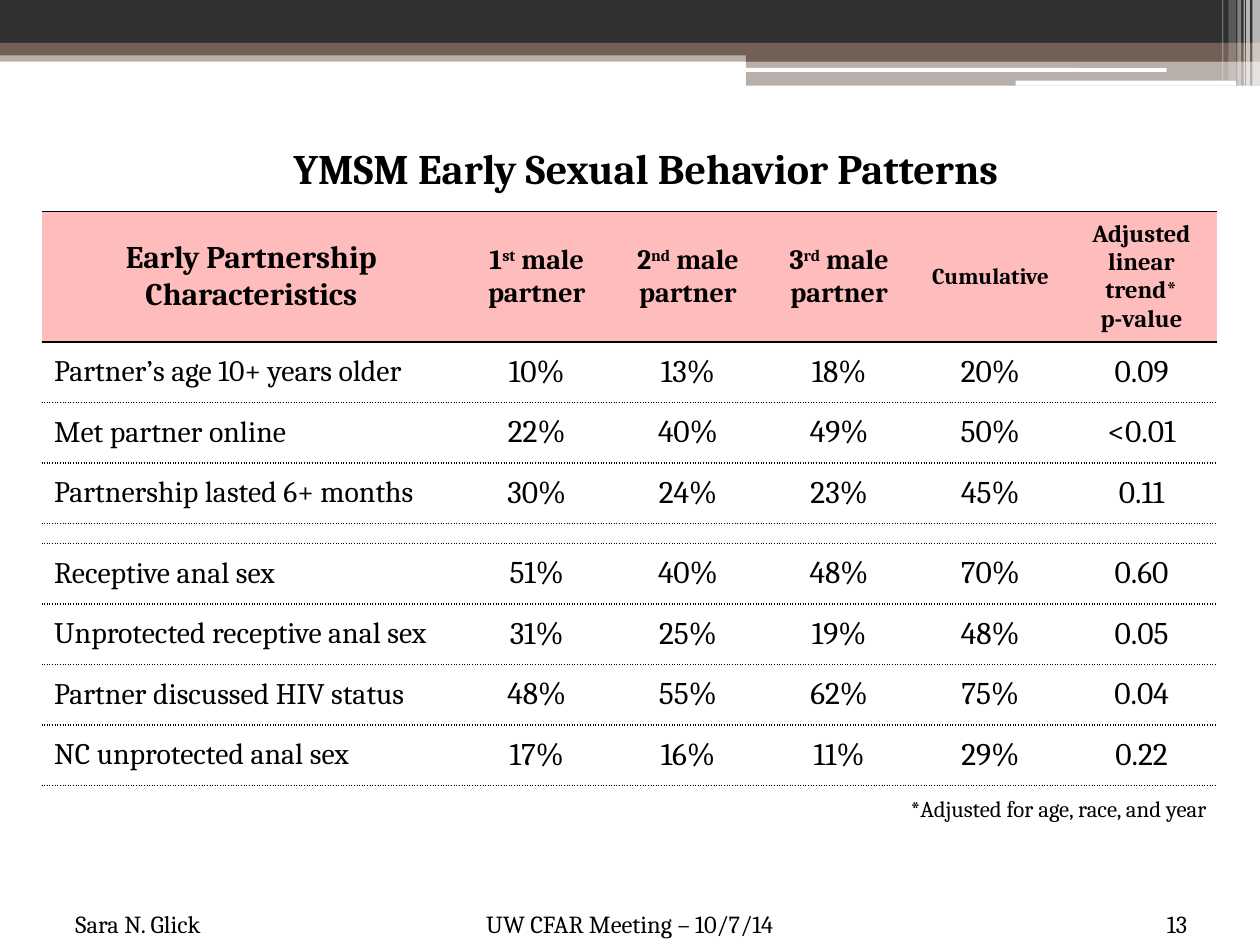
import pptx
import pptx.chart.data
import pptx.dml.color
import pptx.enum.shapes
import pptx.enum.text
import pptx.oxml
import pptx.oxml.ns
import pptx.util
from pptx.util import Inches

FONT = "Cambria"
BLACK, WHITE, DARK, BROWN, PINK = "000000", "FFFFFF", "303030", "726056", "FFBCBC"
ALIGN = pptx.enum.text.PP_ALIGN
ANCHOR = pptx.enum.text.MSO_ANCHOR
SHAPE = pptx.enum.shapes.MSO_SHAPE
NO_GRID_STYLE = "{2D5ABB26-0587-4C30-8999-92F81FD0307C}"

HEADERS = [
    ("Early Partnership Characteristics", "", "", 18),
    ("1", "st", " male partner", 16),
    ("2", "nd", " male partner", 16),
    ("3", "rd", " male partner", 16),
    ("Cumulative", "", "", 13),
    ("Adjusted linear trend*\vp-value", "", "", 14),
]
ROWS = [
    ("Partner’s age 10+ years older", "10%", "13%", "18%", "20%", "0.09"),
    ("Met partner online", "22%", "40%", "49%", "50%", "<0.01"),
    ("Partnership lasted 6+ months", "30%", "24%", "23%", "45%", "0.11"),
    None,
    ("Receptive anal sex", "51%", "40%", "48%", "70%", "0.60"),
    ("Unprotected receptive anal sex", "31%", "25%", "19%", "48%", "0.05"),
    ("Partner discussed HIV status", "48%", "55%", "62%", "75%", "0.04"),
    ("NC unprotected anal sex", "17%", "16%", "11%", "29%", "0.22"),
]


def paint(fill, color, alpha=100):
    """Fill with a solid hex colour at an opacity in percent."""
    fill.solid()
    fill.fore_color.rgb = pptx.dml.color.RGBColor.from_string(color)
    if alpha < 100:
        clr = fill._xPr.find(".//" + pptx.oxml.ns.qn("a:srgbClr"))
        xml = '<a:alpha %s val="%d"/>' % (pptx.oxml.ns.nsdecls("a"), alpha * 1000)
        clr.append(pptx.oxml.parse_xml(xml))


def style(p, size, align=ALIGN.LEFT, bold=False, before=0):
    """Set the font, alignment and leading space of a paragraph."""
    p.alignment = align
    p.space_before = pptx.util.Pt(before)
    p.font.name, p.font.size, p.font.bold = FONT, pptx.util.Pt(size), bold
    paint(p.font.fill, BLACK)


def add_bar(s, box, color, alpha=100, shape=SHAPE.RECTANGLE):
    """Add one borderless bar."""
    sp = s.shapes.add_shape(shape, *map(Inches, box))
    sp.shadow.inherit = False
    sp.line.fill.background()
    paint(sp.fill, color, alpha)


def add_text(s, box, text, size, align=ALIGN.LEFT, anchor=ANCHOR.TOP, bold=False, before=0):
    """Add a wrapped text box and return its paragraph."""
    tf = s.shapes.add_textbox(*map(Inches, box)).text_frame
    tf.word_wrap = True
    tf.vertical_anchor = anchor
    p = tf.paragraphs[0]
    p.text = text
    style(p, size, align, bold, before)
    return p


def add_banner(s, left, top, width):
    """Draw the layered bands and the stripes at their right end."""
    right, half = left + width, left + 5.92
    add_bar(s, (left, top + 0.4, width, 0.09), BROWN, 50)
    add_bar(s, (left, top, width, 0.34), DARK)
    add_bar(s, (left, top + 0.34, width, 0.1), BROWN)
    add_bar(s, (half, top + 0.39, right - half, 0.1), BROWN)
    add_bar(s, (half, top + 0.48, right - half, 0.2), BROWN, 50)
    add_bar(s, (half, top + 0.54, 3.34, 0.03), WHITE, shape=SHAPE.ROUNDED_RECTANGLE)
    add_bar(s, (left + 8.06, top + 0.64, 1.75, 0.04), WHITE, shape=SHAPE.ROUNDED_RECTANGLE)
    stripes = [(0.06, 0.06, 0.68, 65), (0.11, 0.03, 0.68, 65), (0.13, 0.01, 0.68, 60),
               (0.18, 0.03, 0.68, 40), (0.25, 0.06, 0.64, 20), (0.3, 0.01, 0.64, 30)]
    for offset, w, h, alpha in stripes:
        add_bar(s, (right - offset, top, w, h), WHITE, alpha)


def add_border(cell, side, dash):
    """Add a one-point black border to one side of a cell."""
    cell._tc.get_or_add_tcPr().append(pptx.oxml.parse_xml(
        '<a:%s %s w="12700"><a:solidFill><a:srgbClr val="%s"/></a:solidFill>'
        '<a:prstDash val="%s"/></a:%s>'
        % (side, pptx.oxml.ns.nsdecls("a"), BLACK, dash, side)))


def fill_header(cell, before, ordinal, after, size):
    """Write a column heading with an optional raised ordinal."""
    p = cell.text_frame.paragraphs[0]
    p.text = before
    if ordinal:
        r = p.add_run()
        r.text = ordinal
        r._r.get_or_add_rPr().set("baseline", "30000")
        p.add_run().text = after
    style(p, size, ALIGN.CENTER, True, 7)


def add_behavior_table(s, left, top, width):
    """Build the table of partnership characteristics."""
    heights = [0.99] + [0.48 if row else 0.16 for row in ROWS]
    box = map(Inches, (left, top, width, sum(heights)))
    frame = s.shapes.add_table(len(heights), len(HEADERS), *box)
    table = frame.table
    table._tbl.tblPr.find(pptx.oxml.ns.qn("a:tableStyleId")).text = NO_GRID_STYLE
    table.horz_banding = False
    for row, height in zip(table.rows, heights):
        row.height = Inches(height)
    for i, column in enumerate(table.columns):
        column.width = Inches(1.2 if i else width - 6)
    for i, row in enumerate(table.rows):
        for j, cell in enumerate(row.cells):
            cell.vertical_anchor = ANCHOR.MIDDLE
            add_border(cell, "lnT", "solid" if i < 2 else "sysDot")
            add_border(cell, "lnB", "solid" if i == 0 else "sysDot")
            if i == 0:
                fill_header(cell, *HEADERS[j])
                paint(cell.fill, PINK)
                continue
            cell.fill.background()
            p = cell.text_frame.paragraphs[0]
            if ROWS[i - 1]:
                p.text = ROWS[i - 1][j]
                style(p, 18 if j else 17, ALIGN.CENTER if j else ALIGN.LEFT, before=7)
            else:
                cell.margin_top = cell.margin_bottom = 0
                style(p, 4)


def add_footer(s, left, top, width, height):
    """Place the author, the meeting and the slide number."""
    add_text(s, (left, top, 1.92, height), "Sara N. Glick", 14, anchor=ANCHOR.BOTTOM)
    add_text(s, (left, top, width, height), "UW CFAR Meeting – 10/7/14", 14,
             ALIGN.CENTER, ANCHOR.BOTTOM)
    add_text(s, (left + width - 0.67, top, 0.69, height), "13", 14,
             ALIGN.RIGHT, ANCHOR.BOTTOM)


def main():
    """Build the slide and save it."""
    prs = pptx.Presentation()
    prs.slide_width, prs.slide_height = Inches(10), Inches(7.5)
    s = prs.slides.add_slide(prs.slide_layouts[6])
    add_banner(s, 0, 0, 10)
    add_footer(s, 0.5, 7.1, 9, 0.4)
    add_behavior_table(s, 0.33, 1.68, 9.33)
    add_text(s, (6.92, 6.26, 2.75, 0.32), "*Adjusted for age, race, and year", 13, ALIGN.RIGHT)
    p = add_text(s, (0.5, 1.08, 9.25, 0.6), "YMSM Early Sexual Behavior Patterns", 24,
                 ALIGN.CENTER, bold=True, before=7)
    p._p.get_or_add_pPr().set("marL", str(Inches(0.35)))
    p._p.get_or_add_pPr().set("indent", str(Inches(-0.35)))
    prs.save("out.pptx")


if __name__ == "__main__":
    main()
